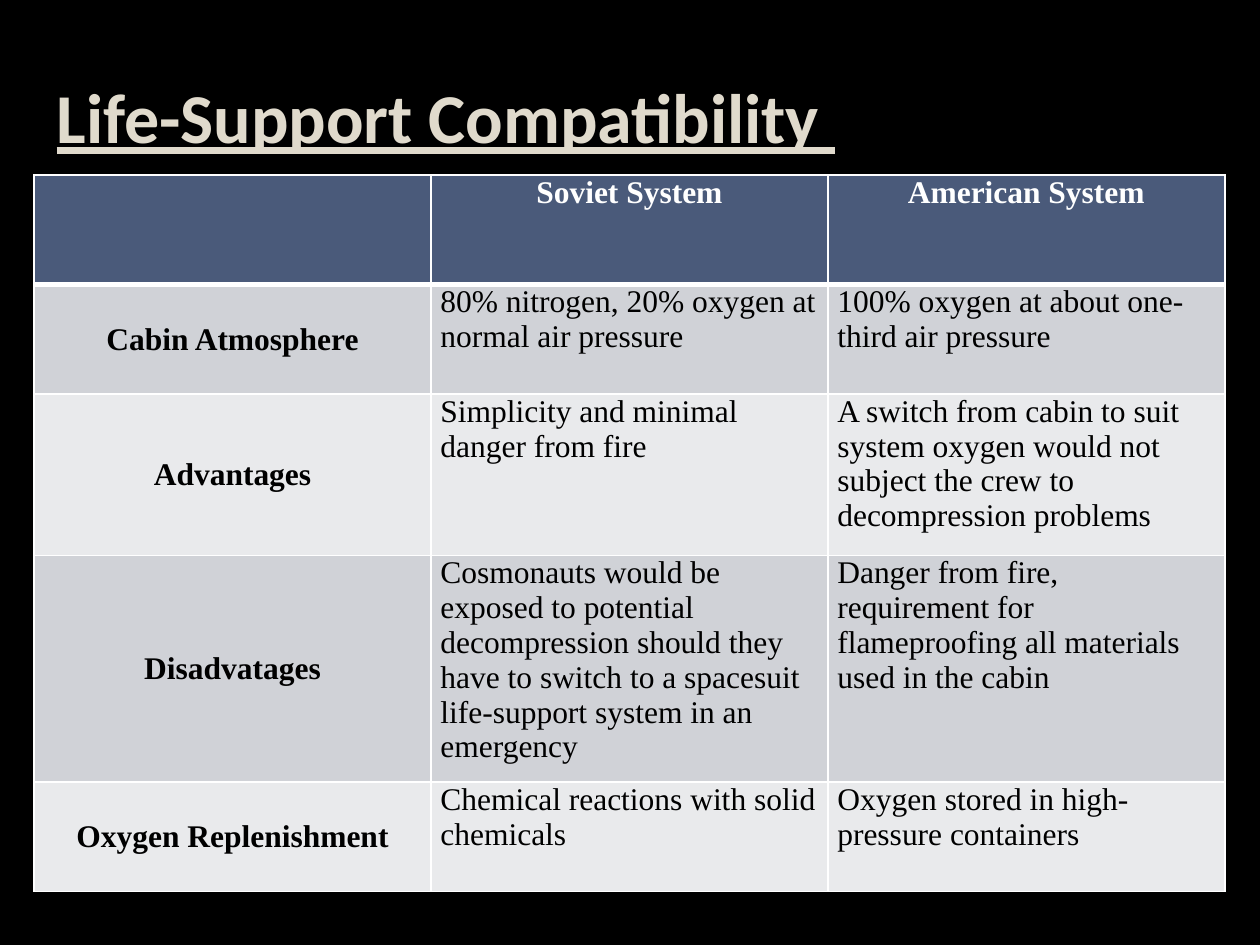
import pptx
import pptx.dml.color
import pptx.enum.text
import pptx.oxml
import pptx.oxml.ns
import pptx.util

Pt = pptx.util.Pt
RGBColor = pptx.dml.color.RGBColor
Align = pptx.enum.text.PP_ALIGN
Anchor = pptx.enum.text.MSO_ANCHOR

BLACK = RGBColor(0x00, 0x00, 0x00)
WHITE = RGBColor(0xFF, 0xFF, 0xFF)
CREAM = RGBColor(0xE0, 0xDA, 0xCC)
NAVY = RGBColor(0x4A, 0x5A, 0x7A)
BAND_DARK = RGBColor(0xD0, 0xD2, 0xD7)
BAND_LIGHT = RGBColor(0xE9, 0xEA, 0xEC)

COLUMN_WIDTH = 226.8
ROW_HEIGHTS = [62.6, 62.6, 92.2, 129.6, 62.6]
ROWS = [
    ["", "Soviet System", "American System"],
    ["Cabin Atmosphere",
     "80% nitrogen, 20% oxygen at normal air pressure",
     "100% oxygen at about one-third air pressure"],
    ["Advantages",
     "Simplicity and minimal danger from fire",
     "A switch from cabin to suit system oxygen would not subject the crew "
     "to decompression problems"],
    ["Disadvatages",
     "Cosmonauts would be exposed to potential decompression should they have "
     "to switch to a spacesuit life-support system in an emergency",
     "Danger from fire, requirement for flameproofing all materials used in the cabin"],
    ["Oxygen Replenishment",
     "Chemical reactions with solid chemicals",
     "Oxygen stored in high-pressure containers"],
]


class SlideBuilder:
    """Holds the page and the style of its elements."""

    title_font = "Calibri"
    table_font = "Times New Roman"

    def __init__(self, page):
        self.page = page

    def background(self, color):
        fill = self.page.background.fill
        fill.solid()
        fill.fore_color.rgb = color

    def add_span(self, para, text, font, size, color, bold):
        span = para.add_run()
        span.text = text
        span.font.name = font
        span.font.size = Pt(size)
        span.font.color.rgb = color
        span.font.bold = bold
        return span

    def title(self, text, left, top, width, height):
        box = self.page.shapes.title
        box.left, box.top = Pt(left), Pt(top)
        box.width, box.height = Pt(width), Pt(height)
        frame = box.text_frame
        frame.word_wrap = True
        frame.vertical_anchor = Anchor.BOTTOM
        para = frame.paragraphs[0]
        para.alignment = Align.LEFT
        para.space_before = Pt(4)
        span = self.add_span(para, text, self.title_font, 40, CREAM, True)
        span.font.underline = True

    def borders(self, cell, top, bottom):
        properties = cell._tc.get_or_add_tcPr()
        sides = [("lnL", 1), ("lnR", 1), ("lnT", top), ("lnB", bottom)]
        for index, (tag, width) in enumerate(sides):
            line = pptx.oxml.parse_xml(
                f'<a:{tag} {pptx.oxml.ns.nsdecls("a")} w="{Pt(width)}">'
                f'<a:solidFill><a:srgbClr val="{WHITE}"/></a:solidFill></a:{tag}>')
            properties.insert(index, line)

    def cell(self, cell, text, row, column):
        header, label = row == 0, column == 0
        cell.margin_left = cell.margin_right = Pt(5.4)
        cell.margin_top = cell.margin_bottom = 0
        cell.vertical_anchor = Anchor.MIDDLE if label else Anchor.TOP
        cell.fill.solid()
        cell.fill.fore_color.rgb = (
            NAVY if header else BAND_DARK if row % 2 else BAND_LIGHT)
        self.borders(cell, top=3 if row == 1 else 1, bottom=3 if header else 1)
        if text:
            para = cell.text_frame.paragraphs[0]
            para.alignment = Align.CENTER if header or label else Align.LEFT
            self.add_span(para, text, self.table_font, 18,
                          WHITE if header else BLACK, header or label)

    def table(self, rows, left, top, column_width, row_heights):
        columns = len(rows[0])
        table = self.page.shapes.add_table(
            len(rows), columns, Pt(left), Pt(top),
            Pt(column_width * columns), Pt(sum(row_heights))).table
        for column in table.columns:
            column.width = Pt(column_width)
        for row, texts in enumerate(rows):
            table.rows[row].height = Pt(row_heights[row])
            for column, text in enumerate(texts):
                self.cell(table.cell(row, column), text, row, column)


def main():
    deck = pptx.Presentation()
    deck.slide_width, deck.slide_height = Pt(720), Pt(540)
    title_only = deck.slide_layouts[5]
    builder = SlideBuilder(deck.slides.add_slide(title_only))

    # Background and heading
    builder.background(BLACK)
    builder.title("Life-Support Compatibility ", 25.2, 9.4, 604.8, 84.2)

    # Comparison of the two systems
    builder.table(ROWS, 19.5, 100, COLUMN_WIDTH, ROW_HEIGHTS)

    deck.save("out.pptx")


if __name__ == "__main__":
    main()
